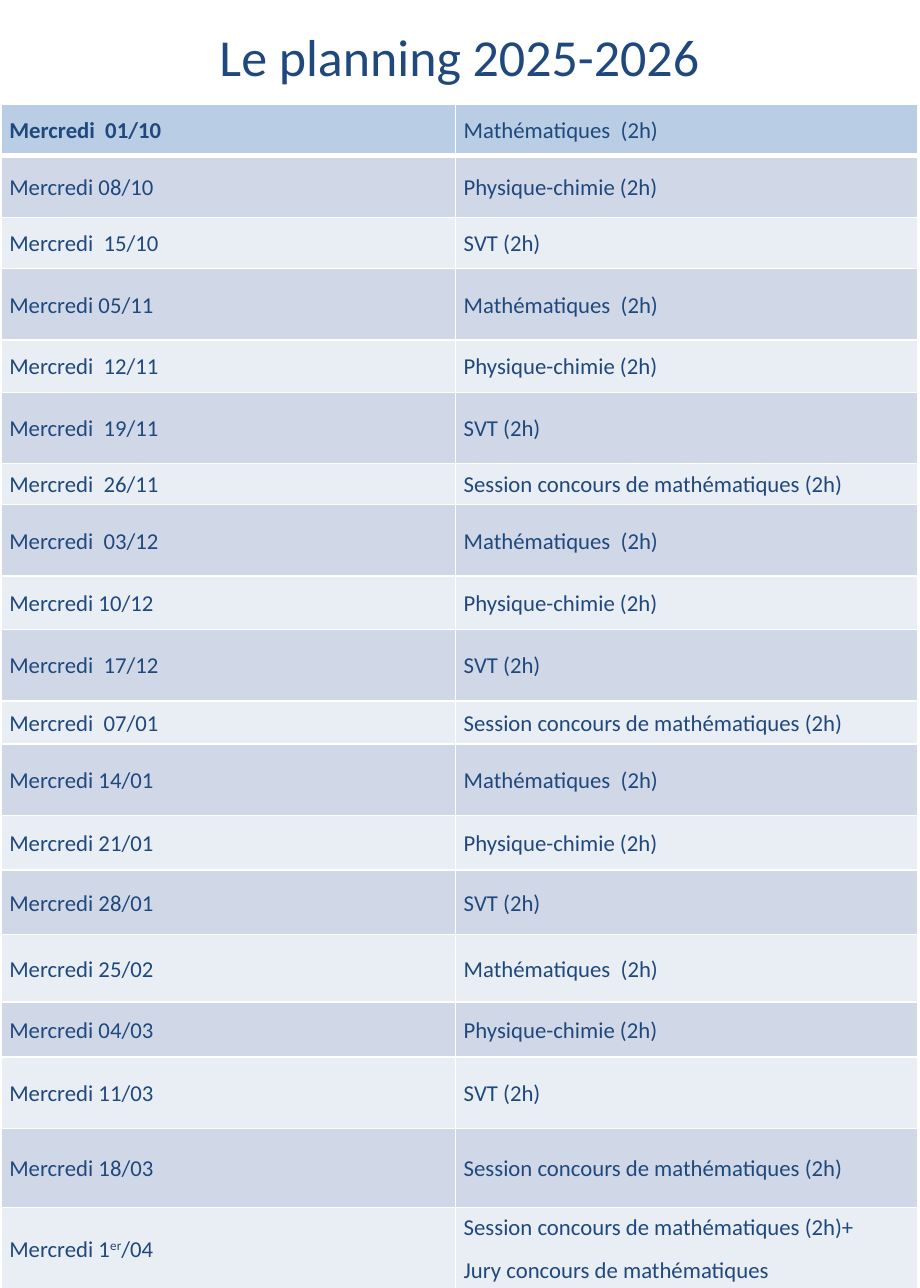
from lxml import etree
from pptx import Presentation
from pptx.dml.color import RGBColor
from pptx.enum.text import MSO_ANCHOR, MSO_AUTO_SIZE, PP_ALIGN
from pptx.oxml.ns import qn
from pptx.util import Inches, Pt

MIDDLE = MSO_ANCHOR.MIDDLE
CENTER = PP_ALIGN.CENTER
GROW = MSO_AUTO_SIZE.SHAPE_TO_FIT_TEXT
FONT = "Calibri"
UNITS = 576
COLORS = {"text": "1F497D", "head": "B9CDE5", "dark": "D0D8E8",
          "light": "E9EDF4", "line": "FFFFFF"}
MATHS = "Mathématiques  (2h)"
PHYSICS = "Physique-chimie (2h)"
SVT = "SVT (2h)"
CONTEST = "Session concours de mathématiques (2h)"
FINAL = CONTEST + "+\nJury concours de mathématiques"
COLS = [3.89, 3.96]
PLAN = [
    ("Mercredi  01/10", MATHS, 0.44),
    ("Mercredi 08/10", PHYSICS, 0.53),
    ("Mercredi  15/10", SVT, 0.44),
    ("Mercredi 05/11", MATHS, 0.61),
    ("Mercredi  12/11", PHYSICS, 0.45),
    ("Mercredi  19/11", SVT, 0.61),
    ("Mercredi  26/11", CONTEST, 0.35),
    ("Mercredi  03/12", MATHS, 0.61),
    ("Mercredi 10/12", PHYSICS, 0.46),
    ("Mercredi  17/12", SVT, 0.61),
    ("Mercredi  07/01", CONTEST, 0.37),
    ("Mercredi 14/01", MATHS, 0.61),
    ("Mercredi 21/01", PHYSICS, 0.47),
    ("Mercredi 28/01", SVT, 0.55),
    ("Mercredi 25/02", MATHS, 0.58),
    ("Mercredi 04/03", PHYSICS, 0.47),
    ("Mercredi 11/03", SVT, 0.61),
    ("Mercredi 18/03", CONTEST, 0.68),
    ("Mercredi 1^er^/04", FINAL, 0.68),
]


def rgb(name):
    return RGBColor.from_string(COLORS[name])


def style(run, size, bold=False):
    font = run.font
    font.name, font.size, font.bold = FONT, Pt(size), bold
    font.color.rgb = rgb("text")


def add_title(slide, text):
    box = slide.shapes.add_textbox(Inches(0.02), Inches(0.16), Inches(7.83), Inches(0.64))
    frame = box.text_frame
    frame.word_wrap = True
    frame.auto_size = GROW
    frame.text = text
    frame.paragraphs[0].alignment = CENTER
    style(frame.paragraphs[0].runs[0], 32)


def set_edges(cell, bottom):
    props = cell._tc.get_or_add_tcPr()
    for side, width in (("L", 1), ("R", 1), ("T", 1), ("B", bottom)):
        line = etree.SubElement(props, qn("a:ln" + side), w=str(Pt(width)))
        fill = etree.SubElement(line, qn("a:solidFill"))
        etree.SubElement(fill, qn("a:srgbClr"), val=COLORS["line"])


def fill_text(cell, text, bold):
    frame = cell.text_frame
    for num, line in enumerate(text.split("\n")):
        para = frame.add_paragraph() if num else frame.paragraphs[0]
        para.line_spacing = 1.07
        para.space_after = Pt(8)
        for part, piece in enumerate(line.split("^")):
            run = para.add_run()
            run.text = piece
            style(run, 14, bold)
            if part % 2:
                run._r.get_or_add_rPr().set("baseline", "30000")


def set_cell(cell, text, row, col):
    cell.vertical_anchor = MIDDLE
    cell.margin_left = cell.margin_right = Inches(0.07)
    cell.margin_top = cell.margin_bottom = Inches(0.04)
    set_edges(cell, 1 if row else 3)
    band = "dark" if row % 2 else "light"
    cell.fill.solid()
    cell.fill.fore_color.rgb = rgb(band if row else "head")
    fill_text(cell, text, row == 0 and col == 0)


def add_plan(slide):
    high = sum(row[-1] for row in PLAN)
    frame = slide.shapes.add_table(len(PLAN), len(COLS), Inches(0.01), Inches(0.89),
                                   Inches(sum(COLS)), Inches(high))
    table = frame.table
    for col, width in enumerate(COLS):
        table.columns[col].width = Inches(width)
    for row, (day, topic, height) in enumerate(PLAN):
        table.rows[row].height = Inches(height)
        for col, text in enumerate((day, topic)):
            set_cell(table.cell(row, col), text, row, col)


def main():
    deck = Presentation()
    deck.slide_width = Inches(4536 / UNITS)
    deck.slide_height = Inches(6350 / UNITS)
    slide = deck.slides.add_slide(deck.slide_layouts[6])
    add_plan(slide)
    add_title(slide, "Le planning 2025-2026")
    deck.save("out.pptx")


if __name__ == "__main__":
    main()
